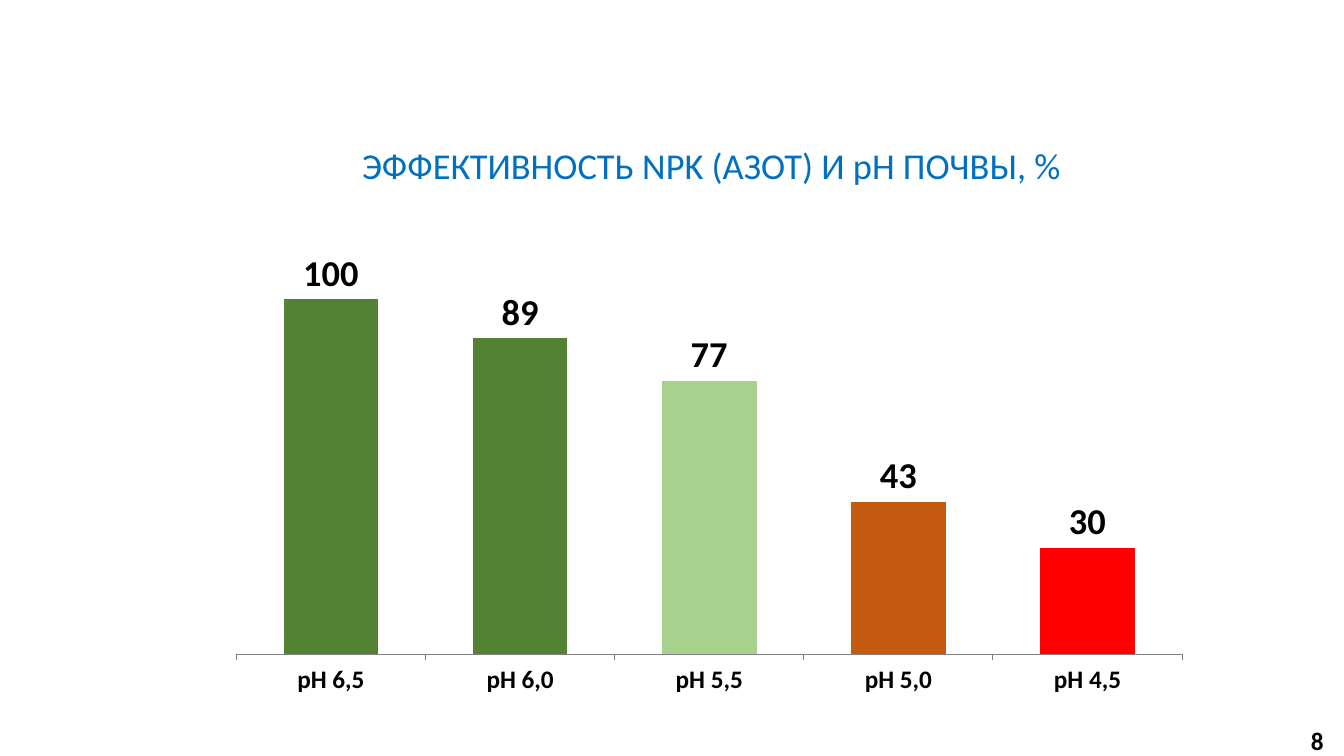
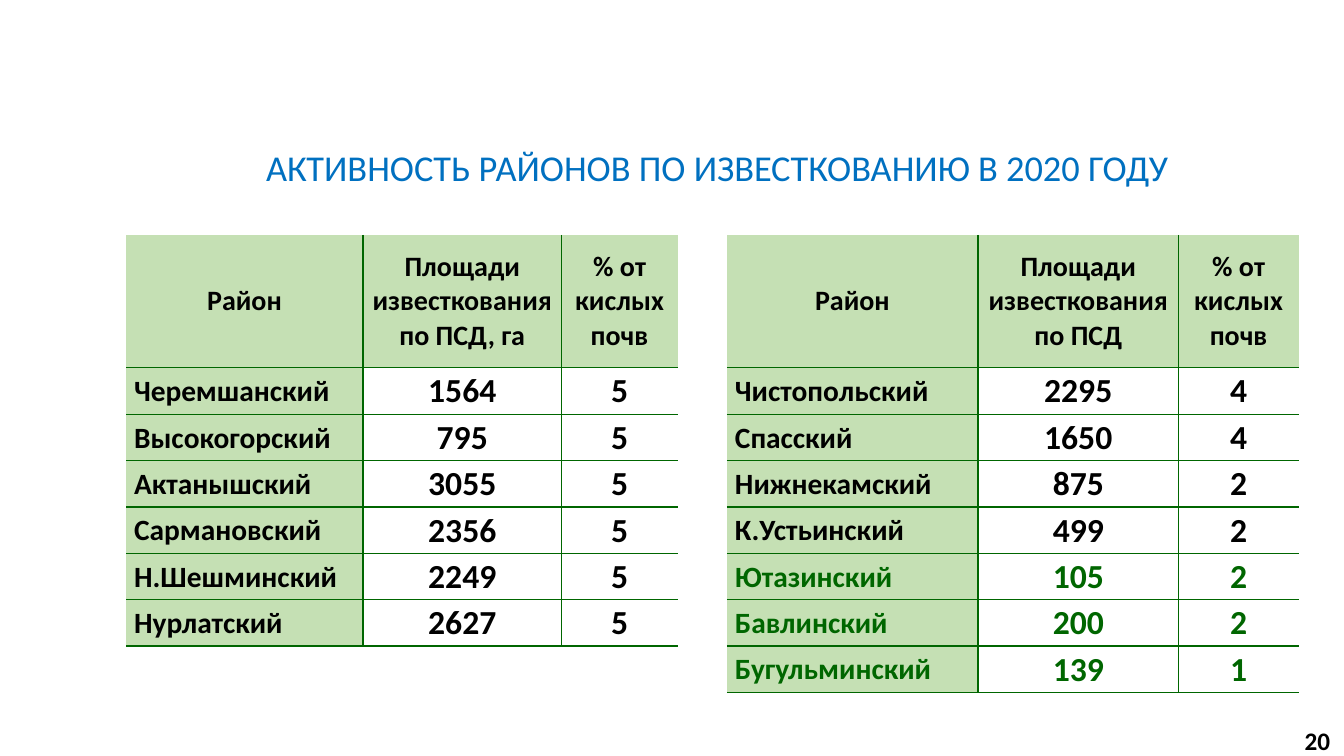
from dataclasses import dataclass

from lxml import etree
from pptx import Presentation
from pptx.chart.data import CategoryChartData
from pptx.dml.color import RGBColor
from pptx.enum.chart import XL_CHART_TYPE, XL_LABEL_POSITION, XL_TICK_MARK
from pptx.enum.shapes import MSO_SHAPE
from pptx.enum.text import MSO_ANCHOR, PP_ALIGN
from pptx.oxml.ns import qn
from pptx.util import Pt

COLUMNS = XL_CHART_TYPE.COLUMN_CLUSTERED
OUTSIDE_END = XL_LABEL_POSITION.OUTSIDE_END
TICK_OUT = XL_TICK_MARK.OUTSIDE
ROUNDED = MSO_SHAPE.ROUNDED_RECTANGLE
MIDDLE = MSO_ANCHOR.MIDDLE
LEFT, CENTER = PP_ALIGN.LEFT, PP_ALIGN.CENTER

EMU_PER_PX = 9144  # 100 px to the inch
FONT = "Calibri"
COLORS = {
    "title": "0070C0",
    "text": "000000",
    "white": "FFFFFF",
    "axis": "808080",
    "series": "5B9BD5",
    "grid": "006600",
    "header": "C5E0B4",
    "good": "548235",
    "fair": "A9D18E",
    "poor": "C55A11",
    "bad": "FF0000",
}


@dataclass(frozen=True)
class Box:
    left: int
    top: int
    width: int
    height: int

    def emu(self) -> tuple[int, ...]:
        return tuple(px(v) for v in (self.left, self.top, self.width, self.height))


@dataclass(frozen=True)
class District:
    name: str
    area: int
    percent: int
    color: str = "text"


@dataclass(frozen=True)
class DistrictTable:
    left: int
    col_widths: tuple[int, ...]
    area_header: str
    districts: tuple[District, ...]


@dataclass(frozen=True)
class SoilBar:
    label: str
    value: int
    color: str


SOIL_BARS = (
    SoilBar("рН 6,5", 100, "good"),
    SoilBar("рН 6,0", 89, "good"),
    SoilBar("рН 5,5", 77, "fair"),
    SoilBar("рН 5,0", 43, "poor"),
    SoilBar("рН 4,5", 30, "bad"),
)

DISTRICT_TABLES = (
    DistrictTable(125, (235, 197, 115), "Площади известкования\vпо ПСД, га", (
        District("Черемшанский", 1564, 5),
        District("Высокогорский", 795, 5),
        District("Актанышский", 3055, 5),
        District("Сармановский", 2356, 5),
        District("Н.Шешминский", 2249, 5),
        District("Нурлатский", 2627, 5),
    )),
    DistrictTable(721, (249, 199, 119), "Площади известкования по ПСД", (
        District("Чистопольский", 2295, 4),
        District("Спасский", 1650, 4),
        District("Нижнекамский", 875, 2),
        District("К.Устьинский", 499, 2),
        District("Ютазинский", 105, 2, "grid"),
        District("Бавлинский", 200, 2, "grid"),
        District("Бугульминский", 139, 1, "grid"),
    )),
)
TABLE_TOP, HEADER_HEIGHT, ROW_HEIGHT = 233, 132, 46


def px(value: int) -> int:
    return value * EMU_PER_PX


def rgb(name: str) -> RGBColor:
    return RGBColor.from_string(COLORS[name])


def style_font(font, size: int, color: str = "text", bold: bool = True) -> None:
    font.name = FONT
    font.size = Pt(size)
    font.bold = bold
    font.color.rgb = rgb(color)


def set_text(frame, text: str, size: int, color: str = "text",
             bold: bool = True, align=CENTER) -> None:
    frame.text = text
    for paragraph in frame.paragraphs:
        paragraph.alignment = align
        for run in paragraph.runs:
            style_font(run.font, size, color, bold)


# Shared slide parts
def add_titled_slide(prs, title: str, title_box: Box, number: int):
    slide = prs.slides.add_slide(prs.slide_layouts[6])
    heading = slide.shapes.add_textbox(*title_box.emu()).text_frame
    heading.word_wrap = True
    set_text(heading, title, 26, "title", bold=False)

    badge = slide.shapes.add_shape(ROUNDED, *Box(1284, 720, 45, 30).emu())
    badge.adjustments[0] = 0
    badge.shadow.inherit = False
    badge.fill.background()
    badge.line.fill.background()
    frame = badge.text_frame
    frame.margin_left = frame.margin_right = 0
    frame.margin_top = frame.margin_bottom = px(5)
    frame.vertical_anchor = MIDDLE
    set_text(frame, str(number), 18)
    return slide


# Column chart
def add_soil_chart(slide, box: Box, bars: tuple[SoilBar, ...]) -> None:
    data = CategoryChartData()
    data.categories = [bar.label for bar in bars]
    data.add_series("Series 1", [bar.value for bar in bars])
    chart = slide.shapes.add_chart(COLUMNS, *box.emu(), data).chart
    chart.has_legend = False
    chart.has_title = False
    style_font(chart.font, 10, bold=False)

    value_axis = chart.value_axis
    value_axis.visible = False
    value_axis.has_major_gridlines = False
    value_axis.minimum_scale = 0
    value_axis.maximum_scale = 120

    category_axis = chart.category_axis
    category_axis.major_tick_mark = TICK_OUT
    category_axis.format.line.color.rgb = rgb("axis")
    category_axis.format.line.width = Pt(0.75)
    style_font(category_axis.tick_labels.font, 18)

    plot = chart.plots[0]
    plot.gap_width = 100
    plot.overlap = -27
    plot.vary_by_categories = False
    series = plot.series[0]
    series.format.fill.solid()
    series.format.fill.fore_color.rgb = rgb("series")
    for index, bar in enumerate(bars):
        fill = series.points[index].format.fill
        fill.solid()
        fill.fore_color.rgb = rgb(bar.color)
    labels = series.data_labels
    labels.show_value = True
    labels.position = OUTSIDE_END
    style_font(labels.font, 26)


# District tables
def set_borders(cell, sides: str) -> None:
    properties = cell._tc.get_or_add_tcPr()
    for side in "LRTB":
        visible = side in sides
        line = etree.SubElement(properties, qn(f"a:ln{side}"), w=str(Pt(1)))
        fill = etree.SubElement(line, qn("a:solidFill" if visible else "a:noFill"))
        if visible:
            etree.SubElement(fill, qn("a:srgbClr"), val=COLORS["grid"])


def add_district_table(slide, spec: DistrictTable) -> None:
    rows = [("Район", spec.area_header, "% от кислых почв")]
    rows += [(d.name, str(d.area), str(d.percent)) for d in spec.districts]
    colors = ["text"] + [d.color for d in spec.districts]
    heights = [HEADER_HEIGHT] + [ROW_HEIGHT] * len(spec.districts)
    last_col = len(spec.col_widths) - 1
    box = Box(spec.left, TABLE_TOP, sum(spec.col_widths), sum(heights))
    table = slide.shapes.add_table(len(rows), last_col + 1, *box.emu()).table
    table.first_row = False
    table.horz_banding = False
    for column, width in zip(table.columns, spec.col_widths):
        column.width = px(width)

    for r, (texts, color, height) in enumerate(zip(rows, colors, heights)):
        table.rows[r].height = px(height)
        for c, text in enumerate(texts):
            cell = table.cell(r, c)
            is_header, is_name = r == 0, r > 0 and c == 0
            set_borders(cell, "B" + "T" * (r > 0) + "L" * (c > 0) + "R" * (c < last_col))
            cell.fill.solid()
            cell.fill.fore_color.rgb = rgb("header" if is_header or is_name else "white")
            cell.margin_left = px(8 if is_name else 1)
            cell.margin_right = px(1)
            cell.margin_top = px(0 if is_header else 1)
            cell.margin_bottom = 0
            cell.vertical_anchor = MIDDLE
            size = 20 if is_header else 21 if is_name else 24
            set_text(cell.text_frame, text, size, color, align=LEFT if is_name else CENTER)


def main() -> None:
    prs = Presentation()
    prs.slide_width, prs.slide_height = px(1333), px(750)

    # Fertilizer efficiency by soil pH
    efficiency = add_titled_slide(
        prs, "ЭФФЕКТИВНОСТЬ NPK (АЗОТ) И pH ПОЧВЫ, %", Box(82, 137, 1248, 54), 8)
    add_soil_chart(efficiency, Box(215, 217, 977, 482), SOIL_BARS)

    # Liming activity by district
    activity = add_titled_slide(
        prs, "АКТИВНОСТЬ РАЙОНОВ ПО ИЗВЕСТКОВАНИЮ В 2020 ГОДУ", Box(91, 139, 1242, 54), 20)
    for spec in DISTRICT_TABLES:
        add_district_table(activity, spec)

    prs.save("out.pptx")


if __name__ == "__main__":
    main()
